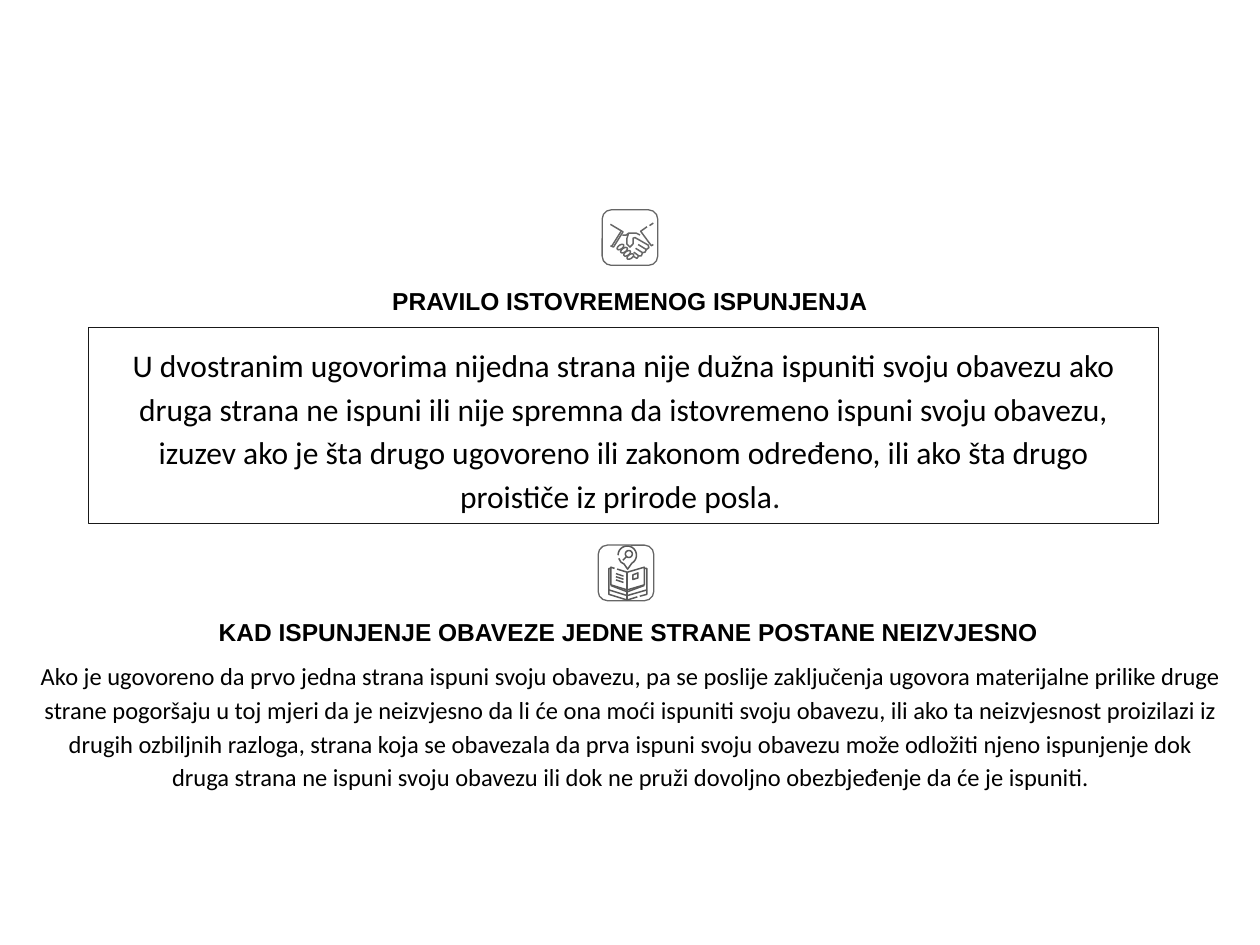
import math

from pptx import Presentation
from pptx.dml.color import RGBColor
from pptx.enum.shapes import MSO_SHAPE
from pptx.enum.text import MSO_ANCHOR, MSO_AUTO_SIZE, PP_ALIGN
from pptx.util import Cm, Pt

TITLE_ONLY = 5
RECT, ROUNDED = MSO_SHAPE.RECTANGLE, MSO_SHAPE.ROUNDED_RECTANGLE
TOP, BOTTOM = MSO_ANCHOR.TOP, MSO_ANCHOR.BOTTOM
CENTER = PP_ALIGN.CENTER
NO_FIT = MSO_AUTO_SIZE.NONE
BLACK, DARK, GREY, BOOK_GREY = "000000", "191919", "666666", "595959"
INSET = Cm(0.26)
ICON_SIZE = Cm(1.12)
UNIT = ICON_SIZE / 44  # icons are drawn on a grid of 44 units

SIMULTANEOUS_RULE = (
    "U dvostranim ugovorima nijedna strana nije dužna ispuniti svoju obavezu ako "
    "druga strana ne ispuni ili nije spremna da istovremeno ispuni svoju obavezu, "
    "izuzev ako je šta drugo ugovoreno ili zakonom određeno, ili ako šta drugo "
    "proističe iz prirode posla"
)
UNCERTAIN_RULE = (
    "Ako je ugovoreno da prvo jedna strana ispuni svoju obavezu, pa se poslije "
    "zaključenja ugovora materijalne prilike druge strane pogoršaju u toj mjeri da je "
    "neizvjesno da li će ona moći ispuniti svoju obavezu, ili ako ta neizvjesnost "
    "proizilazi iz drugih ozbiljnih razloga, strana koja se obavezala da prva ispuni "
    "svoju obavezu može odložiti njeno ispunjenje dok druga strana ne ispuni svoju "
    "obavezu ili dok ne pruži dovoljno obezbjeđenje da će je ispuniti."
)


def arc(x, y, rx, ry, start=0, end=360, tilt=0):
    """Points of an elliptic arc around (x, y), with angles in degrees."""
    t = math.radians(tilt)
    points = []
    for degrees in range(start, end + 1, 15):
        a = math.radians(degrees)
        dx, dy = rx * math.cos(a), ry * math.sin(a)
        points.append((x + dx * math.cos(t) - dy * math.sin(t),
                       y + dx * math.sin(t) + dy * math.cos(t)))
    return points


# An icon is a list of parts; a part is a list of strokes.
KNUCKLES = [arc(x, y, 3, 1.6, tilt=-35)
            for x, y in ((14.5, 29.5), (17.3, 32), (19.8, 34.5), (22.3, 37))]
HANDS = [
    [(6.5, 11.5), (16.5, 17.5), (9, 29.5), (6.5, 28.5)],
    [(15, 17), (7.5, 29)],
    [(16, 20), (19, 20), (21, 18.5), (27, 18.5), (30, 20)],
    [(35.5, 13.5), (30.5, 17), (39, 28.5), (40.5, 27.5)],
    [(21, 18.5), (19.5, 23), (19.5, 27), (22, 29.5), (24.5, 27), (24.5, 22.5),
     (26, 22), (36.5, 28), (37, 30), (35, 31.5), (34, 33.5), (32, 34),
     (31, 36.5), (29, 36.5), (27.5, 38.5), (25, 37)],
    [(28.5, 27.5), (35, 31.5)],
    [(26.5, 30.5), (32, 34)],
    [(25, 33.5), (29, 36.5)],
]
SLEEVE_DASH = [[(37.5, 12.5), (40.5, 10.5)]]
HANDSHAKE = [HANDS + KNUCKLES, SLEEVE_DASH]

PIN = [arc(23, 8, 7.3, 7.3, 180, 420) + [(23.3, 19), (20.5, 15), (18, 13.5), (16.3, 10.5)]]
MAGNIFIER = [arc(24.3, 7, 2.75, 2.75), [(22.5, 9), (19.5, 12)]]
TEXT_LINES = [[[(14, y), (20, y + 2)]] for y in (22.5, 25, 27.5)]
PAGES = [
    [(13, 18.5), (10, 17.5), (10, 31.5), (23, 35.5), (36.5, 31.5), (36.5, 17.5),
     (23, 21.5), (15, 19)],
    [(23, 21.5), (23, 43)],
    [(10, 18.5), (8.5, 18.5), (8.5, 39), (23, 43.5), (31, 41)],
    [(33, 40.5), (38.5, 39), (38.5, 18.5), (36.5, 18.5)],
    [(10, 32), (23, 37), (36.5, 32)],
    [(8.5, 35.5), (23, 40), (38.5, 35.5)],
]
PAGE_PICTURE = [[(27.5, 23.5), (31.5, 22), (31.5, 26), (27.5, 27.2), (27.5, 23.5)]]
BOOK = [PIN, MAGNIFIER, *TEXT_LINES, PAGES, PAGE_PICTURE]


def rgb(value):
    return RGBColor.from_string(value)


def outline(s, color, width=0.75):
    """Leave the shape hollow, with a plain line."""
    s.shadow.inherit = False
    s.fill.background()
    s.line.color.rgb = rgb(color)
    s.line.width = Pt(width)


def place(s, left, top, width, height):
    s.left, s.top, s.width, s.height = Cm(left), Cm(top), Cm(width), Cm(height)


def add_run(p, text, size=14, font="Calibri", color=BLACK, bold=False):
    r = p.add_run()
    r.text = text
    r.font.size, r.font.name, r.font.bold = Pt(size), font, bold
    r.font.color.rgb = rgb(color)


def write(s, text, anchor=TOP, spacing=1.0, **run_format):
    tf = s.text_frame
    tf.word_wrap = True
    tf.auto_size = NO_FIT
    tf.vertical_anchor = anchor
    tf.margin_left = tf.margin_right = tf.margin_top = tf.margin_bottom = INSET
    p = tf.paragraphs[0]
    p.alignment, p.line_spacing = CENTER, spacing
    add_run(p, text, **run_format)
    return p


def write_heading(s, text):
    write(s, text, anchor=BOTTOM, font="Arial", bold=True)


def add_text_box(slide, *box):
    return slide.shapes.add_textbox(*(Cm(v) for v in box))


def add_icon(slide, left, top, parts, color):
    """Draw a rounded frame, and each part inside it as one freeform of open strokes."""
    frame = slide.shapes.add_shape(ROUNDED, left, top, ICON_SIZE, ICON_SIZE)
    outline(frame, GREY)
    for strokes in parts:
        scaled = [[(x * UNIT, y * UNIT) for x, y in stroke] for stroke in strokes]
        builder = slide.shapes.build_freeform(*scaled[0][0])
        for i, (first, *rest) in enumerate(scaled):
            if i:
                builder.move_to(*first)
            builder.add_line_segments(rest, close=False)
        outline(builder.convert_to_shape(left, top), color, 0.85)


def main():
    prs = Presentation()
    prs.slide_width, prs.slide_height = Cm(25.4), Cm(19.05)
    slide = prs.slides.add_slide(prs.slide_layouts[TITLE_ONLY])

    title = slide.shapes.title
    place(title, 6.06, 4.5, 13.28, 2.11)
    write_heading(title, "PRAVILO ISTOVREMENOG ISPUNJENJA")

    rule_box = slide.shapes.add_shape(RECT, Cm(1.79), Cm(6.61), Cm(21.57), Cm(3.94))
    outline(rule_box, DARK)
    p = write(rule_box, SIMULTANEOUS_RULE, spacing=1.15, size=18)
    add_run(p, ". ", size=18, color=DARK)

    write(add_text_box(slide, 0.53, 12.98, 24.38, 4.32), UNCERTAIN_RULE, spacing=1.15)
    write_heading(add_text_box(slide, 3.93, 10.67, 17.48, 2.62),
                  "KAD ISPUNJENJE OBAVEZE JEDNE STRANE POSTANE NEIZVJESNO")

    add_icon(slide, Cm(12.14), Cm(4.23), HANDSHAKE, GREY)
    add_icon(slide, Cm(12.06), Cm(10.99), BOOK, BOOK_GREY)

    prs.save("out.pptx")


if __name__ == "__main__":
    main()
